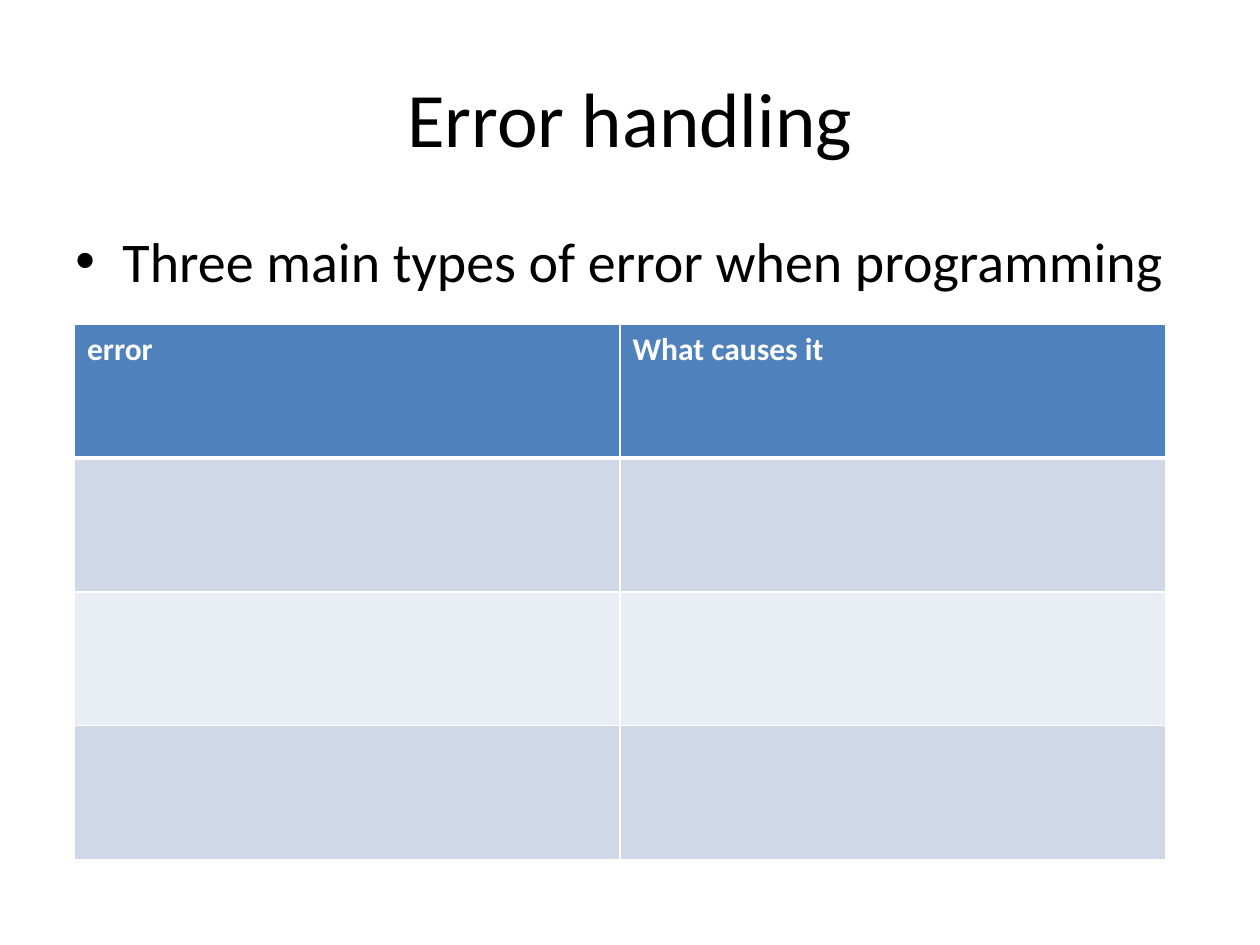
import pptx
import pptx.util
import pptx.dml.color
import pptx.enum.text
import pptx.oxml
import pptx.oxml.ns
from lxml import etree
from pptx.util import Cm, Pt

# Content
TITLE = "Error handling"
BULLET = "Three main types of error when programming"
ROWS = [("error", "What causes it"), ("", ""), ("", ""), ("", "")]

# Look
FONT = "Calibri"
BLACK, WHITE = "000000", "FFFFFF"
HEADER_FILL = "4F81BD"
BAND_FILLS = ["D0D8E8", "E9EDF4"]

# Places: left, top, width, height in cm
TITLE_AREA = (1.27, 0.76, 22.86, 3.18)
BULLET_AREA = (1.27, 4.45, 22.86, 12.57)
TABLE_AREA = (1.5, 6.53, 22, 10.8)
INDENT = Cm(0.95)


def color(value):
    return pptx.dml.color.RGBColor.from_string(value)


def write(para, text, size, fill, bold=False):
    span = para.add_run()
    span.text = text
    span.font.color.rgb = color(fill)
    formats = {"name": FONT, "size": Pt(size), "bold": bold}
    for name, value in formats.items():
        setattr(span.font, name, value)


def place(shape, area):
    for name, value in zip(("left", "top", "width", "height"), area):
        setattr(shape, name, Cm(value))


def add_bullet(para):
    properties = para._p.get_or_add_pPr()
    properties.set("marL", str(INDENT))
    properties.set("indent", str(-INDENT))
    namespace = pptx.oxml.ns.qn
    etree.SubElement(properties, namespace("a:buFont"), typeface="Arial")
    etree.SubElement(properties, namespace("a:buChar"), char="•")


def set_borders(cell, widths):
    properties = cell._tc.get_or_add_tcPr()
    for side, width in widths.items():
        properties.append(pptx.oxml.parse_xml(
            f'<a:ln{side} {pptx.oxml.ns.nsdecls("a")} w="{Pt(width)}">'
            f'<a:solidFill><a:srgbClr val="{WHITE}"/></a:solidFill></a:ln{side}>'))


deck = pptx.Presentation()
deck.slide_width, deck.slide_height = Cm(25.4), Cm(19.05)
page = deck.slides.add_slide(deck.slide_layouts[5])

# Title
title = page.shapes.title
place(title, TITLE_AREA)
title.text_frame.vertical_anchor = pptx.enum.text.MSO_ANCHOR.MIDDLE
para = title.text_frame.paragraphs[0]
para.alignment = pptx.enum.text.PP_ALIGN.CENTER
write(para, TITLE, 44, BLACK)

# Bullet
box = page.shapes.add_textbox(*map(Cm, BULLET_AREA))
box.text_frame.word_wrap = True
para = box.text_frame.paragraphs[0]
para.space_before = Pt(6.4)
add_bullet(para)
write(para, BULLET, 32, BLACK)

# Table of errors
frame = page.shapes.add_table(len(ROWS), len(ROWS[0]), *map(Cm, TABLE_AREA))
for r, row in enumerate(ROWS):
    header = r == 0
    for c, text in enumerate(row):
        cell = frame.table.cell(r, c)
        set_borders(cell, {"L": 1, "R": 1, "T": 3 if r == 1 else 1,
                           "B": 3 if header else 1})
        cell.fill.solid()
        cell.fill.fore_color.rgb = color(
            HEADER_FILL if header else BAND_FILLS[(r - 1) % 2])
        if text:
            write(cell.text_frame.paragraphs[0], text, 18, WHITE, bold=True)

deck.save("out.pptx")
